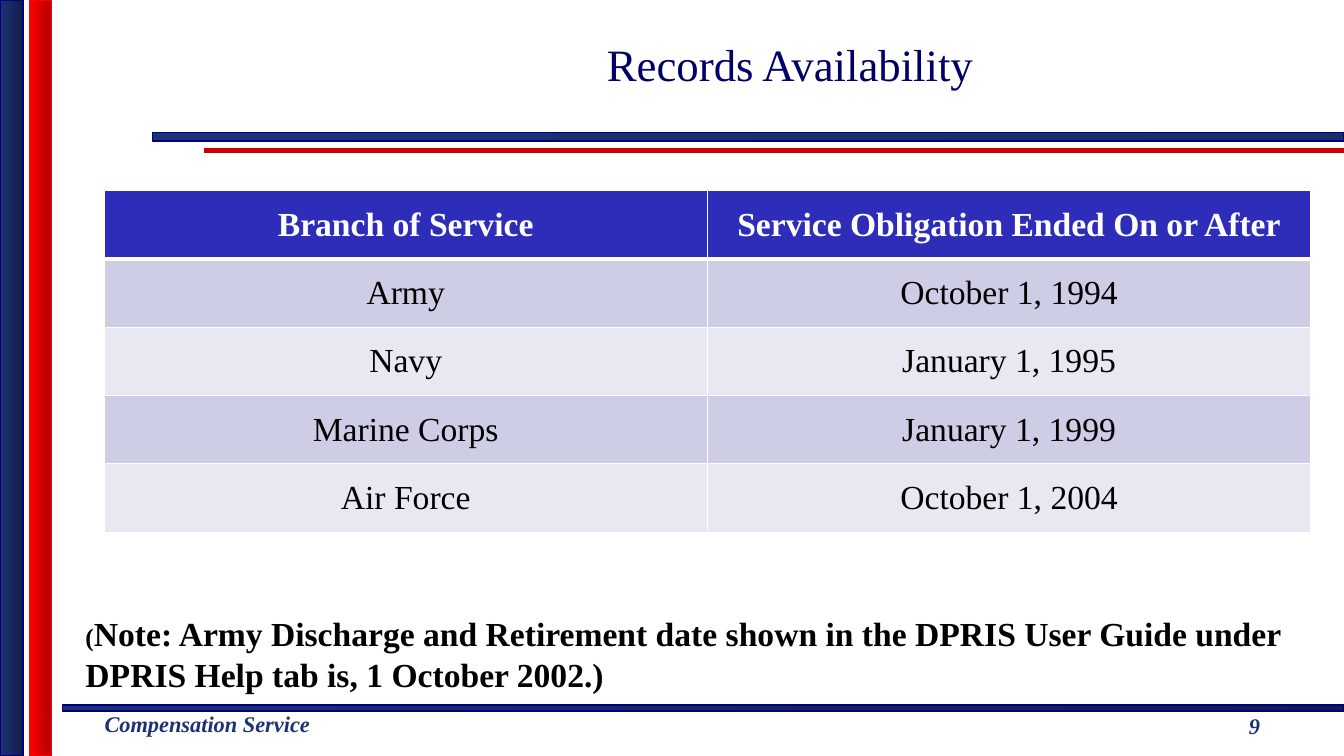
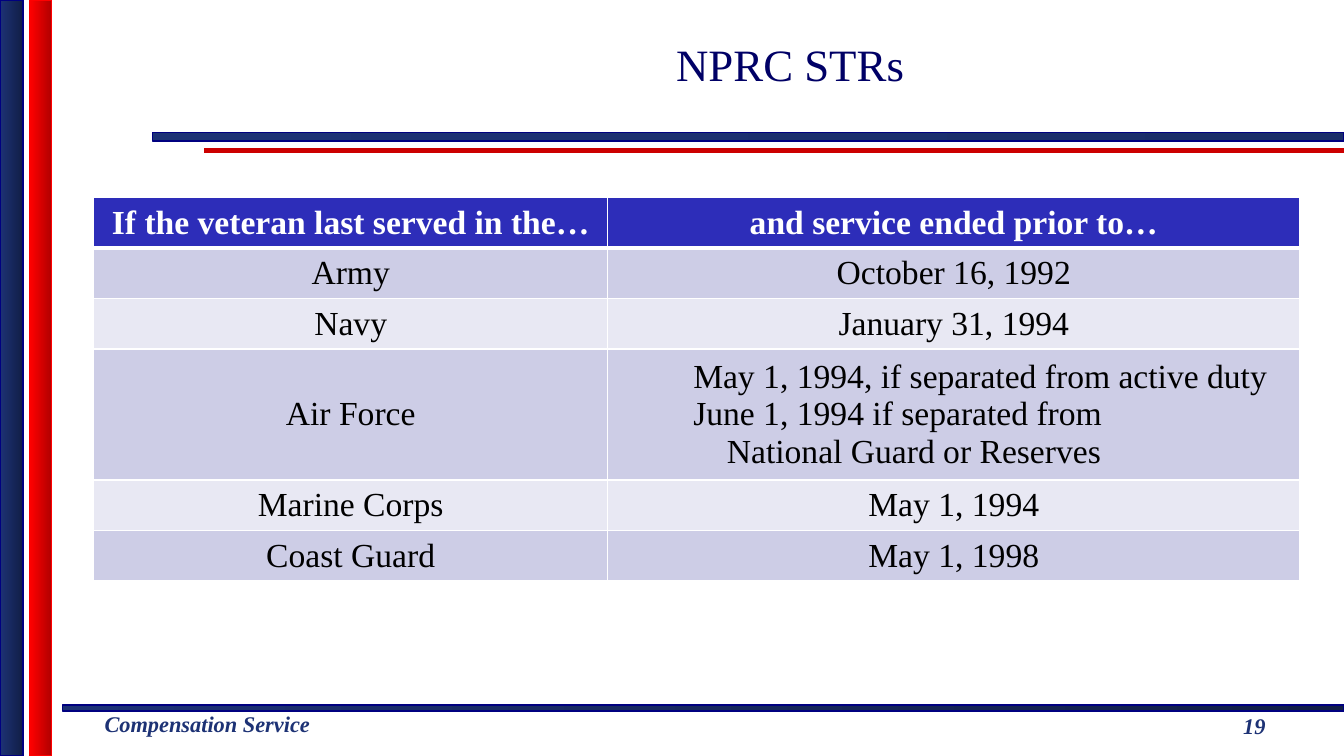
from dataclasses import dataclass

from lxml import etree
from pptx import Presentation
from pptx.dml.color import RGBColor
from pptx.enum import shapes, text
from pptx.oxml import ns
from pptx.util import Pt


@dataclass(frozen=True)
class Theme:
    font: str = "Times New Roman"
    title_size: float = 32
    body_size: float = 24
    small_size: float = 18
    footer_size: float = 16
    title: str = "000066"
    navy: str = "1D3275"
    outline: str = "000080"
    rule: str = "CC0000"
    red: str = "FF0000"
    header: str = "2D2DB9"
    odd_row: str = "CDCDE6"
    even_row: str = "E8E8F3"
    white: str = "FFFFFF"
    black: str = "000000"


THEME = Theme()
PAGE_WIDTH, PAGE_HEIGHT = 960, 540


@dataclass(frozen=True)
class Box:
    left: float
    top: float
    width: float
    height: float

    def points(self) -> tuple:
        return Pt(self.left), Pt(self.top), Pt(self.width), Pt(self.height)


@dataclass(frozen=True)
class Band:
    box: Box
    start: str
    end: str
    outline: str


@dataclass(frozen=True)
class Line:
    """A left-aligned line of a cell, indented by a number of points."""
    text: str
    indent: float


@dataclass(frozen=True)
class Grid:
    left: float
    top: float
    columns: tuple
    heights: tuple
    rows: tuple


@dataclass(frozen=True)
class Page:
    title: str
    number: int
    grid: Grid
    note: tuple = ()


BANDS = (
    Band(Box(44.6, 503.5, PAGE_WIDTH - 44.6, 4.4), THEME.navy, "111E46", THEME.outline),
    Band(Box(109, 94.5, PAGE_WIDTH - 109, 6.3), THEME.navy, "1A2D69", THEME.outline),
    Band(Box(0, 0, 16.6, PAGE_HEIGHT), THEME.navy, "111E46", THEME.outline),
    Band(Box(21.3, 0, 15.4, PAGE_HEIGHT), THEME.red, "B20000", THEME.red),
)
TITLE_BOX = Box(168.4, 0, 792, 90.6)
FOOTER_BOX = Box(67.6, 504, 168, 26.6)
NUMBER_BOX = Box(832, 500.4, 128, 36)
NOTE_BOX = Box(54, 434.6, 883.4, 67)

PAGES = (
    Page(
        "Records Availability", 9,
        Grid(74.3, 136.2, (431, 431), (48.8,) * 5, (
            ("Branch of Service", "Service Obligation Ended On or After"),
            ("Army", "October 1, 1994"),
            ("Navy", "January 1, 1995"),
            ("Marine Corps", "January 1, 1999"),
            ("Air Force", "October 1, 2004"),
        )),
        note=("(", "Note: Army Discharge and Retirement date shown in the DPRIS User Guide "
                   "under DPRIS Help tab is, 1 October 2002.)"),
    ),
    Page(
        "NPRC STRs", 19,
        Grid(67, 141.2, (367, 494.6), (33.8, 33.8, 33.8, 87, 33.8, 33.8), (
            ("If the veteran last served in the…", "and service ended prior to…"),
            ("Army", "October 16, 1992"),
            ("Navy", "January 31, 1994"),
            ("Air Force", (
                Line("May 1, 1994, if separated from active duty", 54),
                Line("June 1, 1994 if separated from", 54),
                Line("National Guard or Reserves", 78),
            )),
            ("Marine Corps", "May 1, 1994"),
            ("Coast Guard", "May 1, 1998"),
        )),
    ),
)


def style(font, size: float, color: str, bold: bool = False, italic: bool = False) -> None:
    font.name, font.size, font.bold, font.italic = THEME.font, Pt(size), bold, italic
    font.color.rgb = RGBColor.from_string(color)


def add_band(slide, band: Band) -> None:
    shape = slide.shapes.add_shape(shapes.MSO_SHAPE.RECTANGLE, *band.box.points())
    shape.shadow.inherit = False
    shape.fill.gradient()
    shape.fill.gradient_angle = 0
    for stop, position, color in zip(shape.fill.gradient_stops, (0, 1), (band.start, band.end)):
        stop.position = position
        stop.color.rgb = RGBColor.from_string(color)
    shape.line.color.rgb = RGBColor.from_string(band.outline)
    shape.line.width = Pt(1)


def add_rule(slide) -> None:
    rule = slide.shapes.add_connector(
        shapes.MSO_CONNECTOR.STRAIGHT, Pt(146), Pt(107.4), Pt(PAGE_WIDTH), Pt(107.4))
    rule.line.color.rgb = RGBColor.from_string(THEME.rule)
    rule.line.width = Pt(4)
    etree.SubElement(rule.element.spPr, ns.qn("a:effectLst"))


def add_text(slide, box: Box, content: str):
    """Add a wrapping text box and return its text frame."""
    frame = slide.shapes.add_textbox(*box.points()).text_frame
    frame.word_wrap = True
    frame.text = content
    return frame


def add_frame(slide, page: Page) -> None:
    """Draw the bands, rule, title and footer that every page carries."""
    add_rule(slide)
    for band in BANDS:
        add_band(slide, band)

    title = slide.shapes.title
    title.left, title.top, title.width, title.height = TITLE_BOX.points()
    title.text_frame.text = page.title
    title.text_frame.auto_size = text.MSO_AUTO_SIZE.NONE
    title.text_frame.vertical_anchor = text.MSO_ANCHOR.MIDDLE
    title_para = title.text_frame.paragraphs[0]
    title_para.alignment = text.PP_ALIGN.CENTER
    style(title_para.runs[0].font, THEME.title_size, THEME.title)

    footer = add_text(slide, FOOTER_BOX, "Compensation Service")
    number = add_text(slide, NUMBER_BOX, str(page.number))
    number.vertical_anchor = text.MSO_ANCHOR.MIDDLE
    number.paragraphs[0].alignment = text.PP_ALIGN.CENTER
    for frame in (footer, number):
        style(frame.paragraphs[0].runs[0].font, THEME.footer_size, THEME.navy, True, True)


def add_borders(cell, row: int) -> None:
    """Give a cell white edges, with a thick one under the header row."""
    properties = cell._tc.get_or_add_tcPr()
    widths = {"lnL": 1, "lnR": 1, "lnT": 3 if row == 1 else 1, "lnB": 3 if row == 0 else 1}
    for edge, width in widths.items():
        line = etree.SubElement(properties, ns.qn(f"a:{edge}"), w=str(Pt(width)))
        fill = etree.SubElement(line, ns.qn("a:solidFill"))
        etree.SubElement(fill, ns.qn("a:srgbClr"), val=THEME.white)


def fill_cell(cell, content, row: int) -> None:
    is_header = row == 0
    add_borders(cell, row)
    cell.fill.solid()
    color = THEME.header if is_header else THEME.odd_row if row % 2 else THEME.even_row
    cell.fill.fore_color.rgb = RGBColor.from_string(color)
    cell.vertical_anchor = text.MSO_ANCHOR.MIDDLE
    lines = (content,) if isinstance(content, str) else content
    for index, line in enumerate(lines):
        frame = cell.text_frame
        para = frame.add_paragraph() if index else frame.paragraphs[0]
        if isinstance(line, Line):
            para.text = line.text
            para._p.get_or_add_pPr().set("marL", str(Pt(line.indent)))
        else:
            para.text = line
            para.alignment = text.PP_ALIGN.CENTER
        style(para.runs[0].font, THEME.body_size,
              THEME.white if is_header else THEME.black, is_header)


def add_grid(slide, grid: Grid) -> None:
    box = Box(grid.left, grid.top, sum(grid.columns), sum(grid.heights))
    table = slide.shapes.add_table(len(grid.rows), len(grid.columns), *box.points()).table
    for column, width in zip(table.columns, grid.columns):
        column.width = Pt(width)
    for row, (height, contents) in enumerate(zip(grid.heights, grid.rows)):
        table.rows[row].height = Pt(height)
        for column, content in enumerate(contents):
            fill_cell(table.cell(row, column), content, row)


def add_note(slide, note: tuple) -> None:
    opening, sentence = note
    para = add_text(slide, NOTE_BOX, opening).paragraphs[0]
    para.add_run().text = sentence
    for span, size in zip(para.runs, (THEME.small_size, THEME.body_size)):
        style(span.font, size, THEME.black, True)


def main() -> None:
    deck = Presentation()
    deck.slide_width, deck.slide_height = Pt(PAGE_WIDTH), Pt(PAGE_HEIGHT)
    title_only = deck.slide_layouts[5]
    for page in PAGES:
        slide = deck.slides.add_slide(title_only)
        add_frame(slide, page)
        add_grid(slide, page.grid)
        if page.note:
            add_note(slide, page.note)
    deck.save("out.pptx")


if __name__ == "__main__":
    main()
